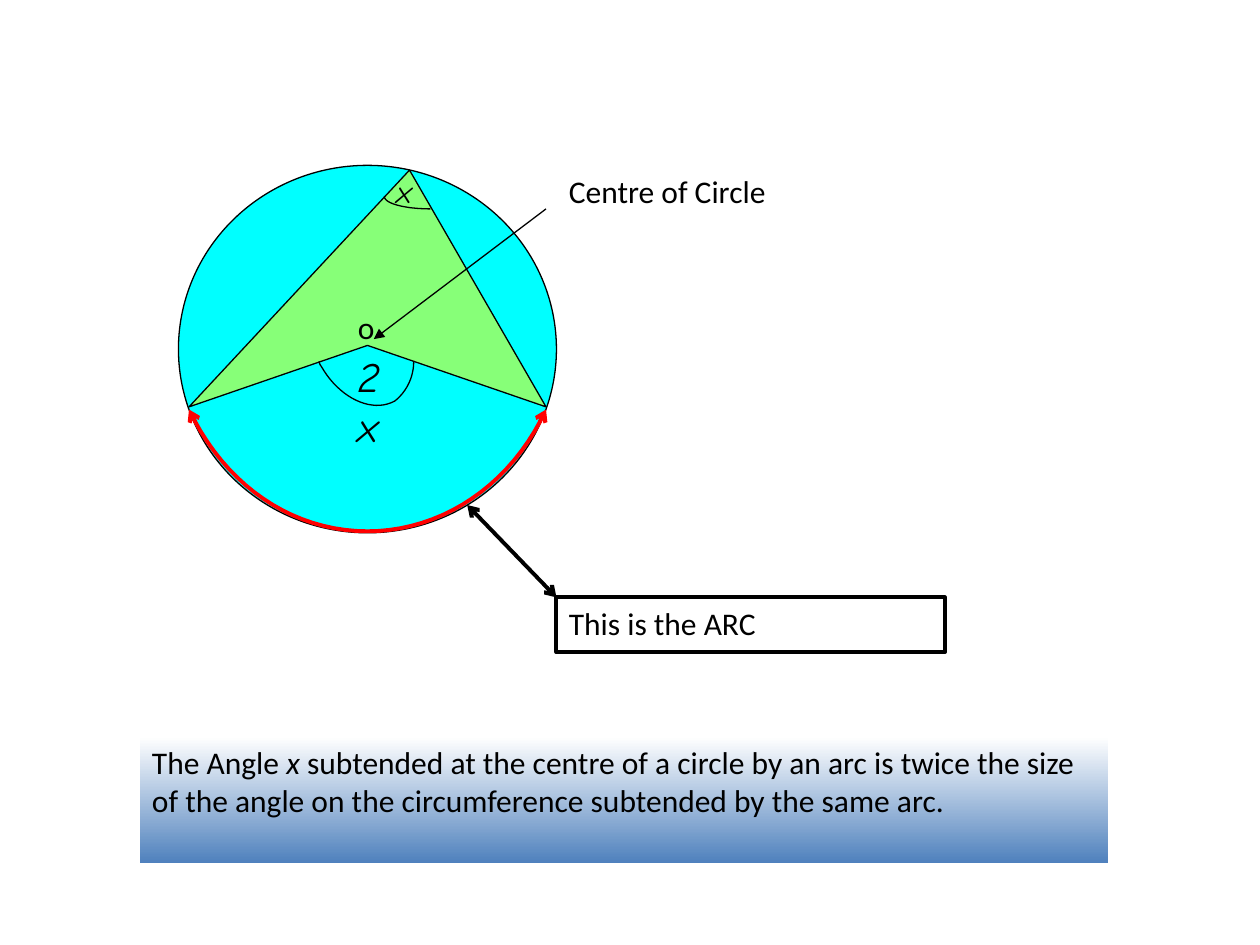
import pptx
import pptx.util
import pptx.dml.color
import pptx.enum.shapes
import pptx.enum.text
import pptx.oxml
import pptx.oxml.ns

COLORS = {"ink": "000000", "circle": "00FFFF", "angle": "FFFF00",
          "arc": "FF0000", "white": "FFFFFF", "banner": "4F81BD"}

presentation = pptx.Presentation()
presentation.slide_width = pptx.util.Inches(10)
presentation.slide_height = pptx.util.Inches(7.5)
slide = presentation.slides.add_slide(presentation.slide_layouts[6])
shapes = slide.shapes

# Grid of 120 columns by 90 rows with square cells
CELL = presentation.slide_width // 120


def color(name):
    return pptx.dml.color.RGBColor.from_string(COLORS[name])


def style_line(shape, name, width, head=None, tail=None):
    shape.line.color.rgb = color(name)
    shape.line.width = pptx.util.Pt(width)
    line = shape.line._get_or_add_ln()
    for tag, kind in (("a:headEnd", head), ("a:tailEnd", tail)):
        if kind:
            end = pptx.oxml.parse_xml(f'<{tag} {pptx.oxml.ns.nsdecls("a")} type="{kind}"/>')
            line.append(end)


# Circle
circle = shapes.add_shape(pptx.enum.shapes.MSO_SHAPE.OVAL,
                          *(round(n * CELL) for n in (17, 15.75, 36, 35)))
circle.shadow.inherit = False
circle.fill.solid()
circle.fill.fore_color.rgb = color("circle")
style_line(circle, "ink", 0.75)

# Translucent figure joining the arc's ends, the circumference and the centre
corners = [(x * CELL, y * CELL) for x, y in ((18, 38.75), (39, 16.2), (52, 38.75), (35, 32.9))]
builder = shapes.build_freeform(*corners[0])
builder.add_line_segments(corners[1:], close=True)
figure = builder.convert_to_shape()
figure.shadow.inherit = False
figure.fill.solid()
figure.fill.fore_color.rgb = color("angle")
fill_color = figure.fill._xPr.find(".//" + pptx.oxml.ns.qn("a:srgbClr"))
fill_color.append(pptx.oxml.parse_xml(f'<a:alpha {pptx.oxml.ns.nsdecls("a")} val="53000"/>'))
style_line(figure, "ink", 0.75)

# Curves as chains of cubic control points: centre angle, top angle, red arc
curves = [
    ([(30.4, 34.4), (30.4, 34.6), (30.5, 34.8), (30.6, 34.9), (32.3, 37.9),
      (35.4, 39.4), (37.6, 38.2), (38.6, 37.4), (39.4, 36.1), (39.4, 34.4)], "ink", 0.75, None),
    ([(41, 19.9), (38.6, 19.9), (36.6, 19.4), (36.6, 18.7)], "ink", 0.75, None),
    ([(18, 39), (21.4, 46.2), (27.8, 50.6), (35, 50.6),
      (42.1, 50.6), (48.7, 46.2), (52, 39)], "arc", 2.25, "arrow"),
]
STEPS = 20
for controls, name, width, arrow in curves:
    points = []
    for first in range(0, len(controls) - 1, 3):
        for step in range(1, STEPS + 1):
            t = step / STEPS
            weights = ((1 - t) ** 3, 3 * t * (1 - t) ** 2, 3 * t * t * (1 - t), t ** 3)
            points.append(tuple(
                CELL * sum(weight * control[axis] for weight, control
                           in zip(weights, controls[first:first + 4]))
                for axis in (0, 1)))
    builder = shapes.build_freeform(*(n * CELL for n in controls[0]))
    builder.add_line_segments(points, close=False)
    curve = builder.convert_to_shape()
    curve.shadow.inherit = False
    curve.fill.background()
    style_line(curve, name, width, arrow, arrow)

# Texts: box, font, size, runs with italic flags
texts = [
    ((32.9, 32.75, 5.65, 6), "Comic Neue", 24, [("2x", True)]),
    ((36.6, 15.75, 4.45, 4.8), "Comic Neue", 18, [("x", True)]),
    ((32.9, 28.7, 6.4, 4.8), "Calibri", 18, [("o", False)]),
    ((53, 15.75, 23.9, 4.8), "Calibri", 18, [("Centre of Circle", False)]),
    ((53, 56.9, 37, 5.2), "Calibri", 18, [("This is the ARC", False)]),
    ((13.3, 70.2, 92.2, 12), "Calibri", 18, [
        ("The Angle ", False), ("x", True),
        (" subtended at the centre of a circle by an arc is twice the size of the angle "
         "on the circumference subtended by the same arc.", False)]),
]
boxes = []
for place, font, size, runs in texts:
    box = shapes.add_textbox(*(round(n * CELL) for n in place))
    box.text_frame.word_wrap = True
    box.text_frame.vertical_anchor = pptx.enum.text.MSO_ANCHOR.TOP
    paragraph = box.text_frame.paragraphs[0]
    for words, italic in runs:
        run = paragraph.add_run()
        run.text = words
        run.font.name = font
        run.font.size = pptx.util.Pt(size)
        run.font.italic = italic
        run.font.color.rgb = color("ink")
    boxes.append(box)
arc_label, banner = boxes[-2:]

# Frame of the arc label and gradient of the banner
style_line(arc_label, "ink", 2.25)
banner.fill.gradient()
banner.fill.gradient_angle = 270
for stop, name, position in zip(banner.fill.gradient_stops, ("white", "banner"), (0, 1)):
    stop.color.rgb = color(name)
    stop.position = position

# Pointers to the arc and to the centre
pointers = [((53, 56.9, 44.5, 48.1), 2.25, "arrow", "arrow"),
            ((52, 19.9, 35.6, 32.3), 0.75, None, "triangle")]
for ends, width, head, tail in pointers:
    pointer = shapes.add_connector(pptx.enum.shapes.MSO_CONNECTOR.STRAIGHT,
                                   *(round(n * CELL) for n in ends))
    style_line(pointer, "ink", width, head, tail)
    pointer._element.spPr.append(
        pptx.oxml.parse_xml(f'<a:effectLst {pptx.oxml.ns.nsdecls("a")}/>'))

presentation.save("out.pptx")
